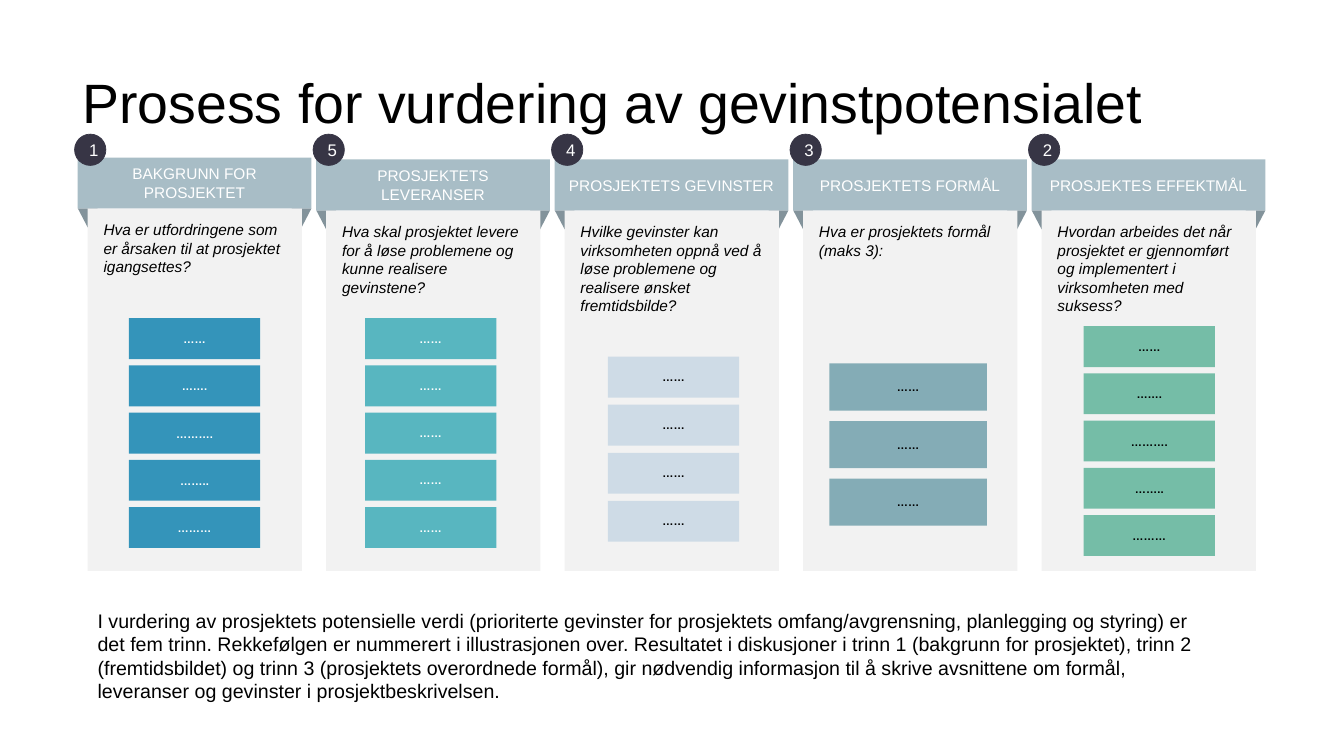
from collections import namedtuple

from pptx import Presentation, util as u
from pptx.dml.color import RGBColor
from pptx.enum import shapes, text

BLACK = RGBColor(0x00, 0x00, 0x00)
WHITE = RGBColor(0xFF, 0xFF, 0xFF)
PANEL = RGBColor(0xF2, 0xF2, 0xF2)
HEADER = RGBColor(0xA8, 0xBD, 0xC6)
FOLD = RGBColor(0x83, 0x93, 0x9B)
BADGE = RGBColor(0x37, 0x35, 0x45)
BLUE = RGBColor(0x34, 0x94, 0xBA)
TURQUOISE = RGBColor(0x58, 0xB6, 0xC0)
PALE = RGBColor(0xCE, 0xDB, 0xE6)
STEEL = RGBColor(0x84, 0xAC, 0xB6)
GREEN = RGBColor(0x75, 0xBD, 0xA7)

FIRST_COLUMN, COLUMN_PITCH = 1.96, 6.01
HEADER_WIDTH, HEADER_HEIGHT = 5.89, 1.28
FOLD_WIDTH, FOLD_HEIGHT = 0.5, 0.48
PANEL_WIDTH, PANEL_BOTTOM = 5.4, 14.39
BADGE_TOP, BADGE_SIZE = 3.38, 0.79
DOTS = ["……", "…….", "……….", "……..", "………"]

Step = namedtuple("Step", "number heading question top boxes")
Boxes = namedtuple("Boxes", "labels left top pitch width height fill color spacing")

STEPS = [
    Step("1", "BAKGRUNN FOR PROSJEKTET",
         "Hva er utfordringene som er årsaken til at prosjektet igangsettes?", 3.97,
         Boxes(DOTS, 3.25, 8.02, 1.19, 3.31, 1.03, BLUE, WHITE, 1.08)),
    Step("5", "PROSJEKTETS LEVERANSER",
         "Hva skal prosjektet levere for å løse problemene og kunne realisere gevinstene?", 4.02,
         Boxes(["……"] * 5, 9.2, 8.02, 1.19, 3.31, 1.03, TURQUOISE, WHITE, 1.0)),
    Step("4", "PROSJEKTETS GEVINSTER",
         "Hvilke gevinster kan virksomheten oppnå ved å løse problemene og realisere "
         "ønsket fremtidsbilde?", 4.02,
         Boxes(["……"] * 4, 15.32, 8.99, 1.21, 3.31, 1.03, PALE, BLACK, 1.0)),
    Step("3", "PROSJEKTETS FORMÅL", "Hva er prosjektets formål (maks 3):", 4.02,
         Boxes(["……"] * 3, 20.9, 9.16, 1.45, 3.97, 1.19, STEEL, BLACK, 1.0)),
    Step("2", "PROSJEKTES EFFEKTMÅL",
         "Hvordan arbeides det når prosjektet er gjennomført og implementert i "
         "virksomheten med suksess?", 4.02,
         Boxes(DOTS, 27.31, 8.22, 1.19, 3.31, 1.03, GREEN, BLACK, 1.08)),
]

SUMMARY = (
    "I vurdering av prosjektets potensielle verdi (prioriterte gevinster for prosjektets "
    "omfang/avgrensning, planlegging og styring) er det fem trinn. Rekkefølgen er nummerert "
    "i illustrasjonen over. Resultatet i diskusjoner i trinn 1 (bakgrunn for prosjektet), "
    "trinn 2 (fremtidsbildet) og trinn 3 (prosjektets overordnede formål), gir nødvendig "
    "informasjon til å skrive avsnittene om formål, leveranser og gevinster i "
    "prosjektbeskrivelsen."
)


def write(shape, wording, size, color, align=text.PP_ALIGN.CENTER,
          anchor=text.MSO_ANCHOR.MIDDLE, insets=(0.25, 0.13, 0.25, 0.13),
          before=0, spacing=1.0, bold=False, italic=False):
    """Put one formatted run of text into a shape."""
    frame = shape.text_frame
    frame.word_wrap = True
    frame.vertical_anchor = anchor
    frame.margin_left, frame.margin_top, frame.margin_right, frame.margin_bottom = map(u.Cm, insets)
    paragraph = frame.paragraphs[0]
    paragraph.alignment = align
    paragraph.space_before = u.Pt(before)
    paragraph.line_spacing = spacing
    run = paragraph.add_run()
    run.text = wording
    font = run.font
    font.name, font.size, font.bold, font.italic = "Arial", u.Pt(size), bold, italic
    font.color.rgb = color


def add_filled(parent, kind, left, top, width, height, fill):
    """Add a flat preset shape without outline."""
    shape = parent.shapes.add_shape(kind, *map(u.Cm, (left, top, width, height)))
    shape.shadow.inherit = False
    shape.fill.solid()
    shape.fill.fore_color.rgb = fill
    shape.line.fill.background()
    return shape


def add_banner(group, step, left):
    """Add the folded header ribbon and the question panel of a step."""
    kinds = shapes.MSO_SHAPE
    panel_top = step.top + HEADER_HEIGHT
    for fold_left in (left, left + HEADER_WIDTH - FOLD_WIDTH):
        fold = add_filled(group, kinds.ISOSCELES_TRIANGLE, fold_left, panel_top,
                          FOLD_WIDTH, FOLD_HEIGHT, FOLD)
        fold.rotation = 180
    panel = add_filled(group, kinds.RECTANGLE, left + FOLD_WIDTH / 2, panel_top,
                       PANEL_WIDTH, PANEL_BOTTOM - panel_top, PANEL)
    write(panel, step.question, 11, BLACK, text.PP_ALIGN.LEFT, text.MSO_ANCHOR.TOP,
          (0.4, 0.3, 0.4, 0.2), before=6, italic=True)
    header = add_filled(group, kinds.RECTANGLE, left, step.top, HEADER_WIDTH, HEADER_HEIGHT, HEADER)
    write(header, step.heading, 11, WHITE, before=11)


def add_badge(group, number, left):
    """Add the numbered circle at the corner of a header."""
    badge = add_filled(group, shapes.MSO_SHAPE.OVAL, left, BADGE_TOP, BADGE_SIZE, BADGE_SIZE, BADGE)
    badge.line.color.rgb = BADGE
    badge.line.width = u.Pt(0.5)
    write(badge, number, 12, WHITE, before=11)


def add_boxes(group, boxes):
    """Stack the answer boxes of a step at equal distances."""
    for row, label in enumerate(boxes.labels):
        box = add_filled(group, shapes.MSO_SHAPE.RECTANGLE, boxes.left,
                         boxes.top + row * boxes.pitch, boxes.width, boxes.height, boxes.fill)
        write(box, label, 8, boxes.color, insets=(0.1, 0.1, 0.1, 0.1),
              spacing=boxes.spacing, bold=True)


def add_title(slide):
    """Place and fill the title placeholder."""
    title = slide.shapes.title
    title.left, title.top, title.width, title.height = map(u.Cm, (1.83, 1.52, 29.34, 2.26))
    title.text_frame.auto_size = text.MSO_AUTO_SIZE.NONE
    write(title, "Prosess for vurdering av gevinstpotensialet", 39.6, BLACK,
          text.PP_ALIGN.LEFT, spacing=0.9)


def add_summary(slide):
    """Add the explanation below the columns."""
    summary = slide.shapes.add_textbox(*map(u.Cm, (2.21, 15.21, 28.7, 2.64)))
    write(summary, SUMMARY, 14, BLACK, text.PP_ALIGN.LEFT, text.MSO_ANCHOR.TOP)
    summary.text_frame.auto_size = text.MSO_AUTO_SIZE.SHAPE_TO_FIT_TEXT


def main():
    """Build the slide and save it."""
    presentation = Presentation()
    presentation.slide_width, presentation.slide_height = u.Cm(33.87), u.Cm(19.05)
    slide = presentation.slides.add_slide(presentation.slide_layouts[5])
    add_title(slide)
    for column, step in enumerate(STEPS):
        left = FIRST_COLUMN + column * COLUMN_PITCH
        group = slide.shapes.add_group_shape()
        add_banner(group, step, left)
        add_badge(group, step.number, left - 0.08)
        add_boxes(group, step.boxes)
    add_summary(slide)
    presentation.save("out.pptx")


if __name__ == "__main__":
    main()
